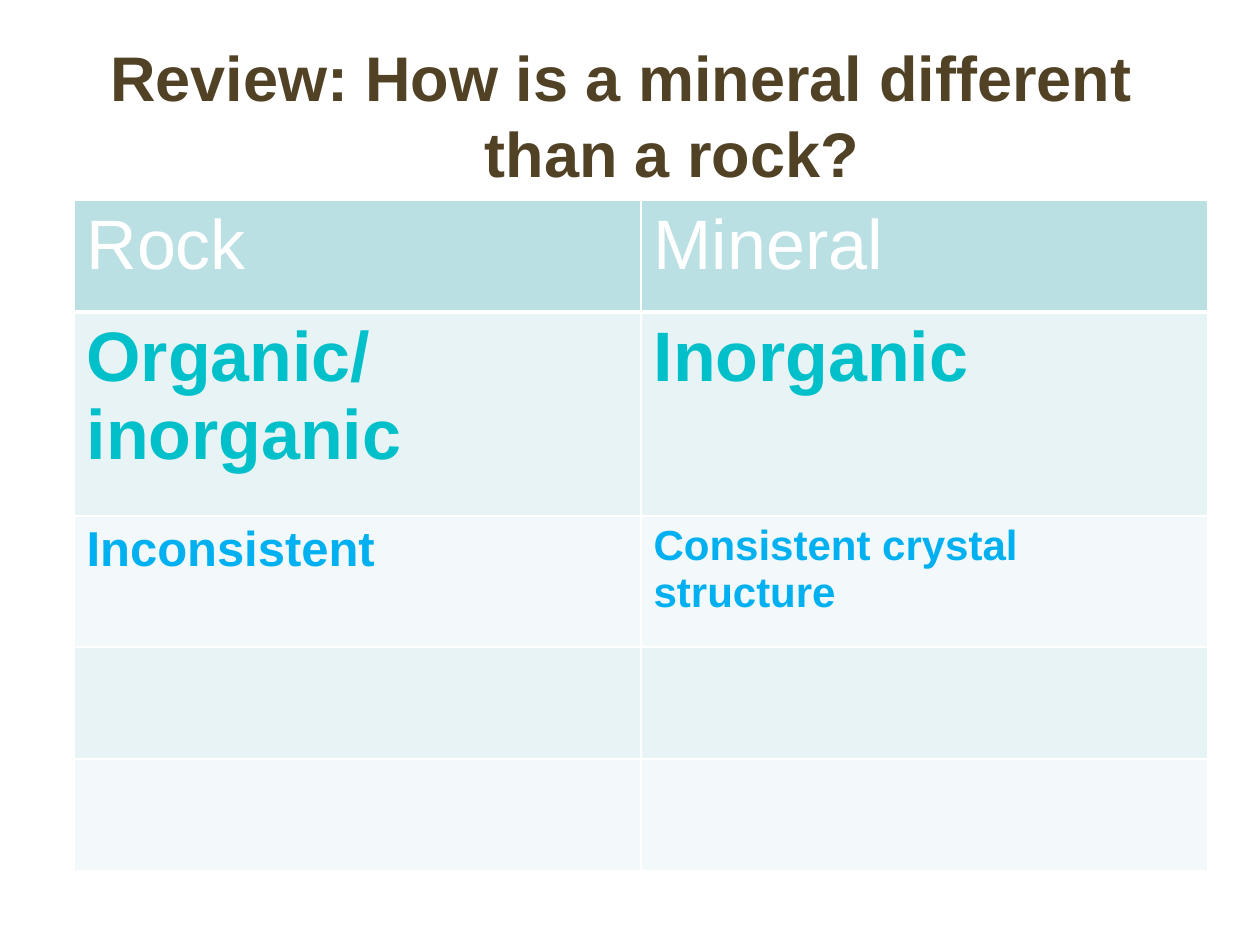
from typing import NamedTuple

from lxml.etree import SubElement
from pptx import Presentation
from pptx.dml.color import RGBColor
from pptx.enum.text import MSO_ANCHOR as Anchor, MSO_AUTO_SIZE as AutoSize, PP_ALIGN as Align
from pptx.oxml.ns import qn
from pptx.util import Emu, Pt

PX_PER_INCH = 126
FONT = "Arial"
WHITE = "FFFFFF"


class Entry(NamedTuple):
    text: str
    size: int


class Row(NamedTuple):
    height: int
    fill: str
    color: str
    bold: bool
    entries: tuple[Entry, ...]


def px(length: int) -> Emu:
    return Emu(round(length * 914400 / PX_PER_INCH))


def rgb(color: str) -> RGBColor:
    return RGBColor.from_string(color)


def style(paragraph, size: int, color: str, bold: bool) -> None:
    font = paragraph.font
    font.name, font.size, font.bold = FONT, Pt(size), bold
    font.color.rgb = rgb(color)


def add_borders(cell, bottom_width: int) -> None:
    properties = cell._tc.get_or_add_tcPr()
    for side, width in (("L", 1), ("R", 1), ("T", 1), ("B", bottom_width)):
        line = SubElement(properties, qn(f"a:ln{side}"), w=str(Pt(width)))
        SubElement(SubElement(line, qn("a:solidFill")), qn("a:srgbClr"), val=WHITE)


def draw_title(title, text: str) -> None:
    title.left, title.top, title.width, title.height = px(63), px(73), px(1134), px(158)
    frame = title.text_frame
    frame.auto_size = AutoSize.NONE
    frame.vertical_anchor = Anchor.MIDDLE
    frame.word_wrap = True
    heading = frame.paragraphs[0]
    heading.text = text
    heading.alignment = Align.CENTER
    # Hanging indent
    indent = px(84)
    properties = heading._p.get_or_add_pPr()
    properties.set("marL", str(indent))
    properties.set("indent", str(-indent))
    style(heading, 36, "514225", True)


def draw_comparison(slide, rows: tuple[Row, ...]) -> None:
    height = sum(row.height for row in rows)
    table = slide.shapes.add_table(
        len(rows), 2, px(74), px(200), px(1134), px(height)).table
    for r, row in enumerate(rows):
        table.rows[r].height = px(row.height)
        for c in range(2):
            cell = table.cell(r, c)
            add_borders(cell, 3 if r == 0 else 1)
            cell.fill.solid()
            cell.fill.fore_color.rgb = rgb(row.fill)
            if row.entries:
                entry = row.entries[c]
                cell.text = entry.text
                style(cell.text_frame.paragraphs[0], entry.size, row.color, row.bold)


ROWS = (
    Row(112, "BBE0E3", WHITE, False, (Entry("Rock", 40), Entry("Mineral", 40))),
    Row(204, "E7F3F4", "02C0CA", True,
        (Entry("Organic/inorganic", 40), Entry("Inorganic", 40))),
    Row(131, "F3F9FA", "00B0F0", True,
        (Entry("Inconsistent", 28), Entry("Consistent crystal structure", 24))),
    Row(112, "E7F3F4", WHITE, False, ()),
    Row(112, "F3F9FA", WHITE, False, ()),
)


def main() -> None:
    deck = Presentation()
    deck.slide_width, deck.slide_height = px(1260), px(945)
    slide = deck.slides.add_slide(deck.slide_layouts[5])

    # Question, with line breaks inside one paragraph
    draw_title(slide.shapes.title,
               "Review: How is a mineral different \vthan a rock?\v")

    # Rock and mineral side by side
    draw_comparison(slide, ROWS)

    deck.save("out.pptx")


if __name__ == "__main__":
    main()
